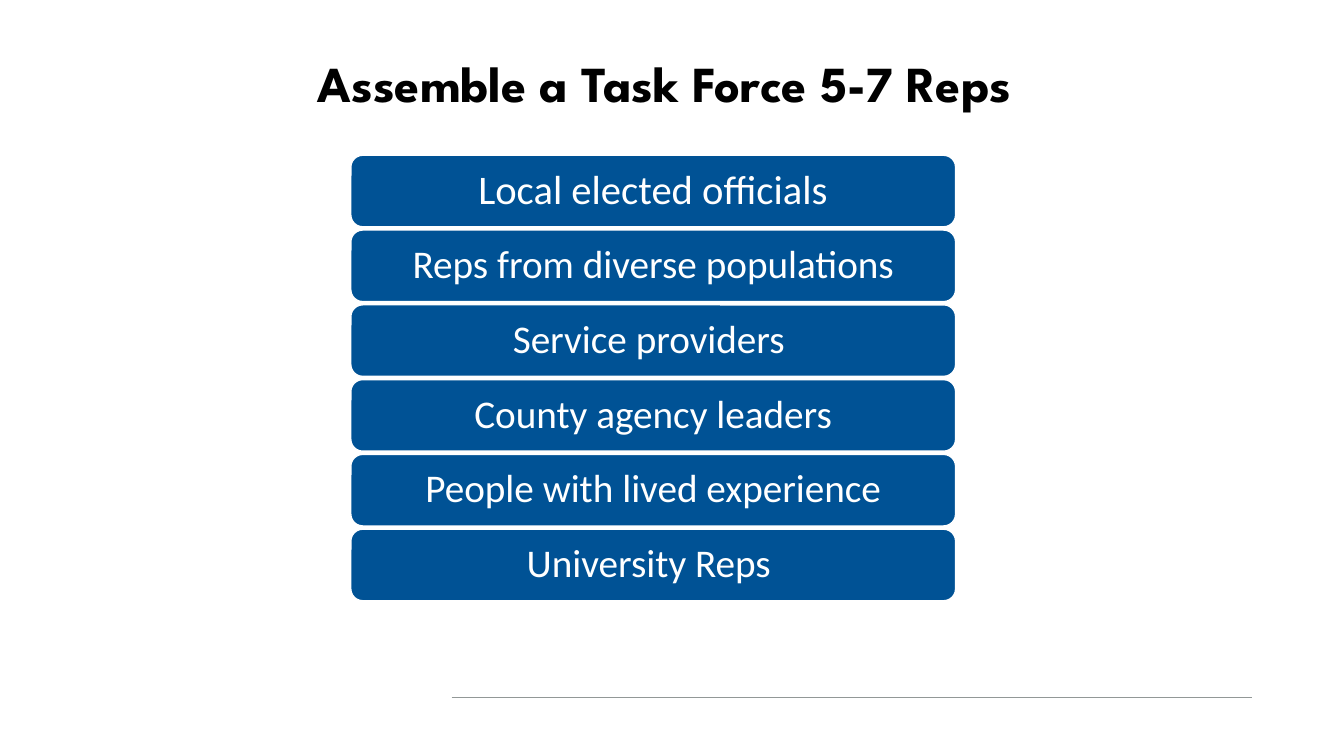
from dataclasses import dataclass

import pptx
import pptx.dml.color
import pptx.enum.shapes
import pptx.enum.text
import pptx.oxml
import pptx.oxml.ns
import pptx.shapes.base
import pptx.slide
import pptx.text.text
import pptx.util

Pt = pptx.util.Pt
RGBColor = pptx.dml.color.RGBColor
Anchor = pptx.enum.text.MSO_ANCHOR


@dataclass(frozen=True)
class Theme:
    bar: RGBColor = RGBColor.from_string("005295")
    light: RGBColor = RGBColor.from_string("FFFFFF")
    dark: RGBColor = RGBColor.from_string("000000")
    rule: RGBColor = RGBColor.from_string("929897")
    title_font: str = "League Spartan"
    body_font: str = "Calibri"
    title_size: float = 36
    first_size: float = 29
    body_size: float = 28


@dataclass(frozen=True)
class Member:
    label: str
    size: float


THEME = Theme()
# The trailing spaces are part of the wording and shift the centred text slightly.
MEMBERS = [
    Member("Local elected officials", THEME.first_size),
    Member("Reps from diverse populations", THEME.body_size),
    Member("Service providers ", THEME.body_size),
    Member("County agency leaders", THEME.body_size),
    Member("People with lived experience", THEME.body_size),
    Member("University Reps ", THEME.body_size),
]
BAR_LEFT, BAR_TOP, BAR_WIDTH, BAR_HEIGHT = 250.6, 110.9, 432, 51.1
BAR_PITCH = 53.42


def write_text(
    frame: pptx.text.text.TextFrame,
    text: str,
    *,
    font: str,
    size: float,
    color: RGBColor,
    bold: bool = False,
    anchor: Anchor = Anchor.MIDDLE,
    inset_x: float = 7.2,
    inset_y: float = 3.6,
) -> None:
    frame.word_wrap = True
    frame.vertical_anchor = anchor
    frame.margin_left = frame.margin_right = Pt(inset_x)
    frame.margin_top = frame.margin_bottom = Pt(inset_y)
    paragraph = frame.paragraphs[0]
    paragraph.alignment = pptx.enum.text.PP_ALIGN.CENTER
    paragraph.line_spacing = 0.9
    run = paragraph.add_run()
    run.text = text
    run.font.name = font
    run.font.size = Pt(size)
    run.font.bold = bold
    run.font.color.rgb = color


def draw_footer_rule(slide: pptx.slide.Slide) -> None:
    rule = slide.shapes.add_connector(
        pptx.enum.shapes.MSO_CONNECTOR.STRAIGHT,
        Pt(322.6), Pt(498.2), Pt(894.2), Pt(498.2),
    )
    rule.line.color.rgb = THEME.rule
    rule.line.width = Pt(0.75)
    properties = rule._element.spPr
    properties.append(pptx.oxml.parse_xml(
        f"<a:effectLst {pptx.oxml.ns.nsdecls('a')}/>"
    ))


def draw_title(slide: pptx.slide.Slide) -> None:
    title = slide.shapes.add_textbox(Pt(132.5), Pt(38.9), Pt(694), Pt(72))
    write_text(
        title.text_frame,
        "Assemble a Task Force 5-7 Reps ",
        font=THEME.title_font,
        size=THEME.title_size,
        color=THEME.dark,
        bold=True,
        anchor=Anchor.TOP,
    )


def draw_member(slide: pptx.slide.Slide, member: Member, row: int) -> None:
    bar = slide.shapes.add_shape(
        pptx.enum.shapes.MSO_SHAPE.ROUNDED_RECTANGLE,
        Pt(BAR_LEFT), Pt(BAR_TOP + row * BAR_PITCH), Pt(BAR_WIDTH), Pt(BAR_HEIGHT),
    )
    bar.shadow.inherit = False
    bar.fill.solid()
    bar.fill.fore_color.rgb = THEME.bar
    bar.line.color.rgb = THEME.light
    bar.line.width = Pt(1)
    write_text(
        bar.text_frame,
        member.label,
        font=THEME.body_font,
        size=member.size,
        color=THEME.light,
        inset_x=9,
        inset_y=4.5,
    )


def main() -> None:
    deck = pptx.Presentation()
    deck.slide_width, deck.slide_height = Pt(960), Pt(540)
    slide = deck.slides.add_slide(deck.slide_layouts[6])
    draw_footer_rule(slide)
    draw_title(slide)
    for row, member in enumerate(MEMBERS):
        draw_member(slide, member, row)
    deck.save("out.pptx")


if __name__ == "__main__":
    main()
